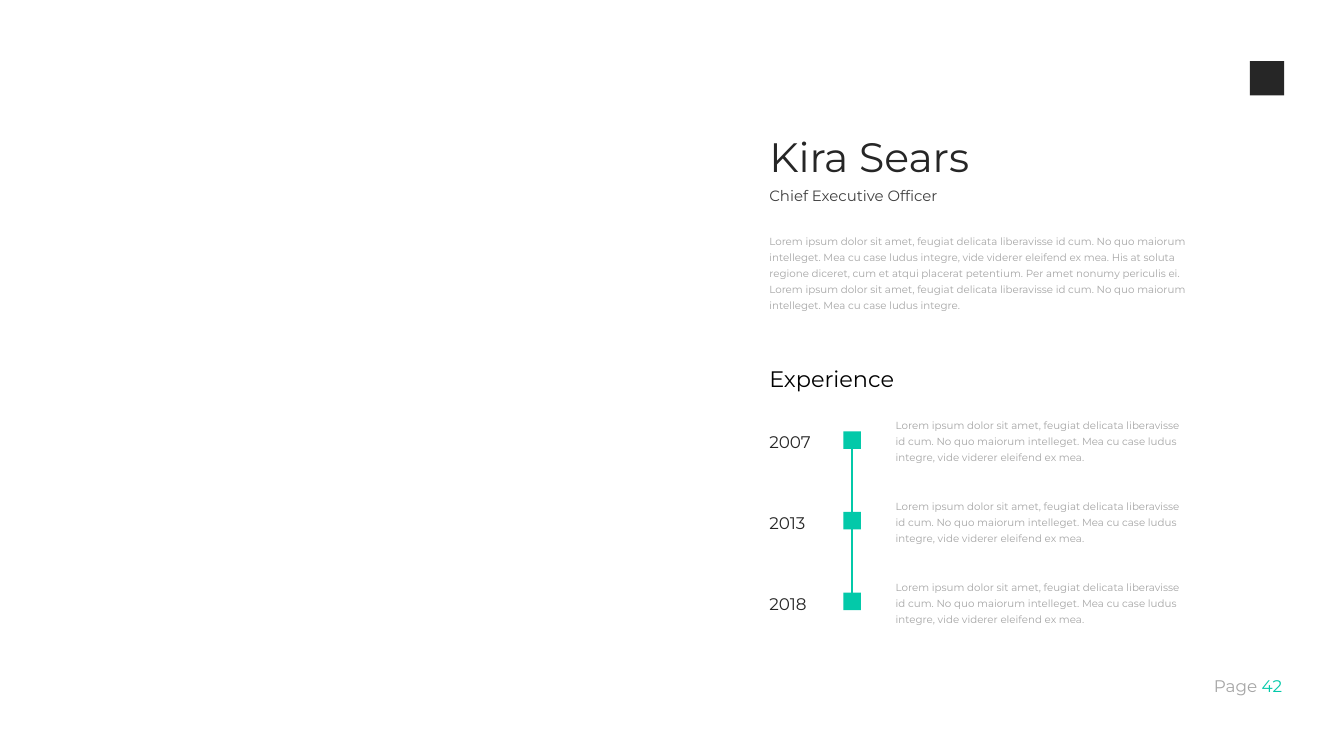
from dataclasses import dataclass

from lxml import etree
from pptx import Presentation
from pptx.dml.color import RGBColor
from pptx.enum.shapes import MSO_CONNECTOR, MSO_SHAPE
from pptx.enum.text import PP_ALIGN
from pptx.oxml.ns import qn
from pptx.util import Pt

RECT = MSO_SHAPE.RECTANGLE
STRAIGHT = MSO_CONNECTOR.STRAIGHT
LEFT, RIGHT = PP_ALIGN.LEFT, PP_ALIGN.RIGHT
TOP, BOTTOM = 0, 2


@dataclass(frozen=True)
class Theme:
    font: str = "Montserrat"
    teal: str = "03C9A9"
    dark: str = "262626"
    mid: str = "404040"
    grey: str = "A6A6A6"
    black: str = "000000"
    name: int = 44
    head: int = 24
    year: int = 18
    role: int = 16
    body: int = 11


THEME = Theme()

SHORT = ("Lorem ipsum dolor sit amet, feugiat delicata liberavisse id cum. "
         "No quo maiorum intelleget. Mea cu case ludus integre, "
         "vide viderer eleifend ex mea.")
BIO = (SHORT + " His at soluta regione diceret, cum et atqui placerat "
       "petentium. Per amet nonumy periculis ei. Lorem ipsum dolor sit amet, "
       "feugiat delicata liberavisse id cum. No quo maiorum intelleget. "
       "Mea cu case ludus integre.")
YEARS = ("2007", "2013", "2018")

# Layout in points
EDGE = 817.2   # left edge of the text column
STEP = 86.4    # distance between timeline rows
MARK = 18.7    # side of a timeline marker


def style(run, size, color):
    run.font.name = THEME.font
    run.font.size = Pt(size)
    run.font.color.rgb = RGBColor.from_string(color)


def add_box(slide, x, y, w, h, wrap=True):
    box = slide.shapes.add_textbox(Pt(x), Pt(y), Pt(w), Pt(h))
    box.text_frame.word_wrap = wrap
    return box.text_frame


def set_par(par, text, size, color, line=1.0, gap=0):
    par.text = text
    par.alignment = LEFT
    par.line_spacing = line
    par.space_before = Pt(gap)
    style(par.runs[0], size, color)


def add_rect(slide, x, y, side, color):
    rect = slide.shapes.add_shape(RECT, Pt(x), Pt(y), Pt(side), Pt(side))
    rect.shadow.inherit = False
    rect.fill.solid()
    rect.fill.fore_color.rgb = RGBColor.from_string(color)
    rect.line.fill.background()
    return rect


def add_link(slide, first, last):
    link = slide.shapes.add_connector(STRAIGHT, 0, 0, 0, 0)
    link.begin_connect(first, BOTTOM)
    link.end_connect(last, TOP)
    link.line.color.rgb = RGBColor.from_string(THEME.teal)
    link.line.width = Pt(1.5)
    props = link._element.spPr
    etree.SubElement(props, qn("a:effectLst"))


def add_page(slide, number):
    par = add_box(slide, 1254.2, 720.7, 126.7, 29).paragraphs[0]
    par.alignment = RIGHT
    for text, color in (("Page ", THEME.grey), (number, THEME.teal)):
        run = par.add_run()
        run.text = text
        style(run, THEME.year, color)


def add_intro(slide):
    frame = add_box(slide, EDGE, 137.5, 355, 85.7)
    set_par(frame.paragraphs[0], "Kira Sears", THEME.name, THEME.dark)
    set_par(frame.add_paragraph(), "Chief Executive Officer",
            THEME.role, THEME.mid, gap=6)
    frame = add_box(slide, EDGE, 244.1, 481.7, 93.6)
    set_par(frame.paragraphs[0], BIO, THEME.body, THEME.grey, 1.3, 12)


def add_time(slide):
    frame = add_box(slide, EDGE, 388.1, 197.3, 36)
    set_par(frame.paragraphs[0], "Experience", THEME.head, THEME.black)
    marks = []
    for row, year in enumerate(YEARS):
        drop = row * STEP
        frame = add_box(slide, EDGE, 455 + drop, 59.8, 32, wrap=False)
        set_par(frame.paragraphs[0], year, THEME.year, THEME.dark, 1.2, 6)
        marks.append(add_rect(slide, 903.6, 462.2 + drop, MARK, THEME.teal))
        frame = add_box(slide, 952.6, 442.1 + drop, 329, 57.6)
        set_par(frame.paragraphs[0], SHORT, THEME.body, THEME.grey, 1.3, 6)
    add_link(slide, marks[0], marks[-1])


def main():
    deck = Presentation()
    deck.slide_width, deck.slide_height = Pt(1440), Pt(810)
    slide = deck.slides.add_slide(deck.slide_layouts[6])

    # Page furniture: number and plain corner block
    add_page(slide, "42")
    add_rect(slide, 1339.2, 65.5, 36.7, THEME.dark)

    # Profile and career
    add_intro(slide)
    add_time(slide)

    deck.save("out.pptx")


if __name__ == "__main__":
    main()
